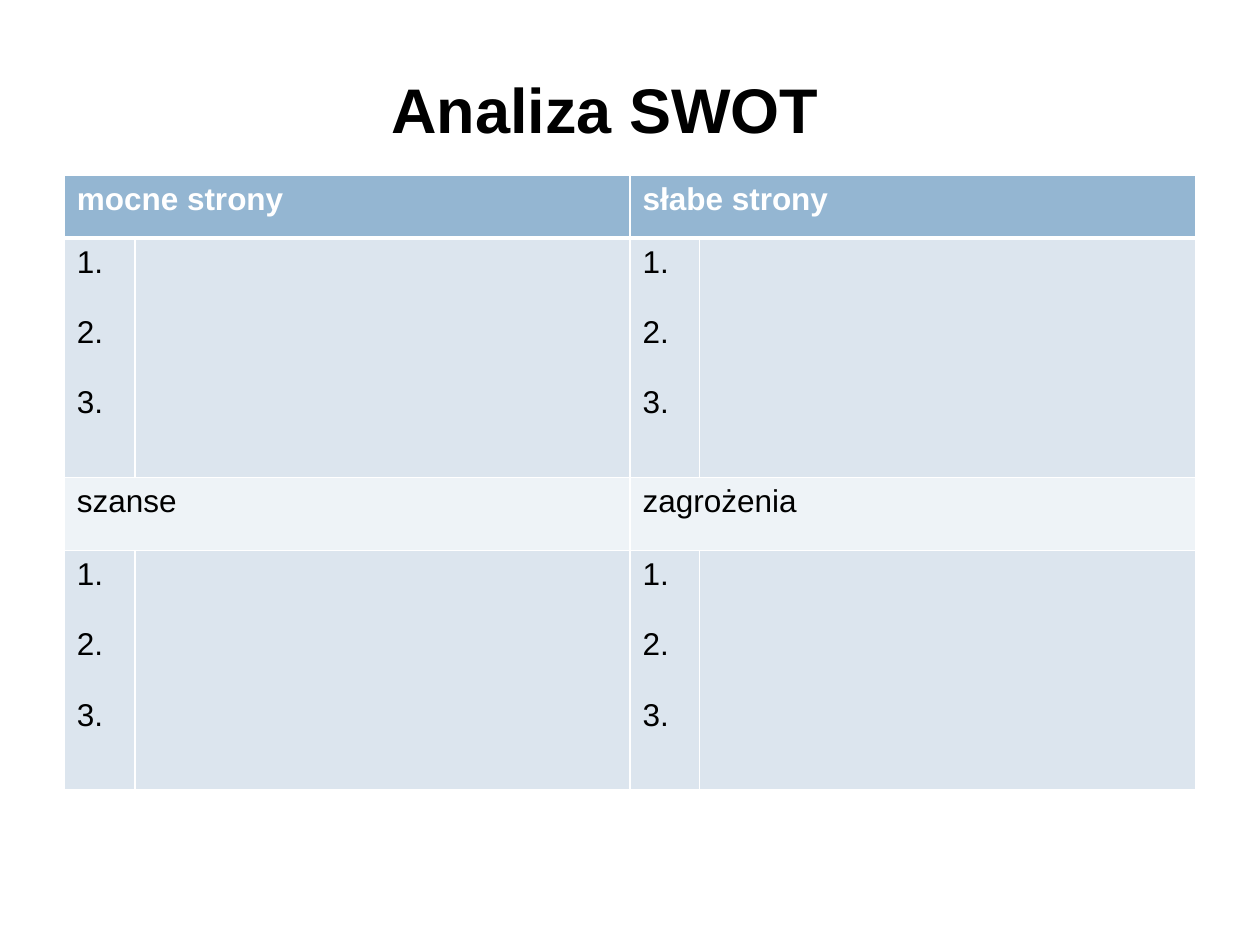
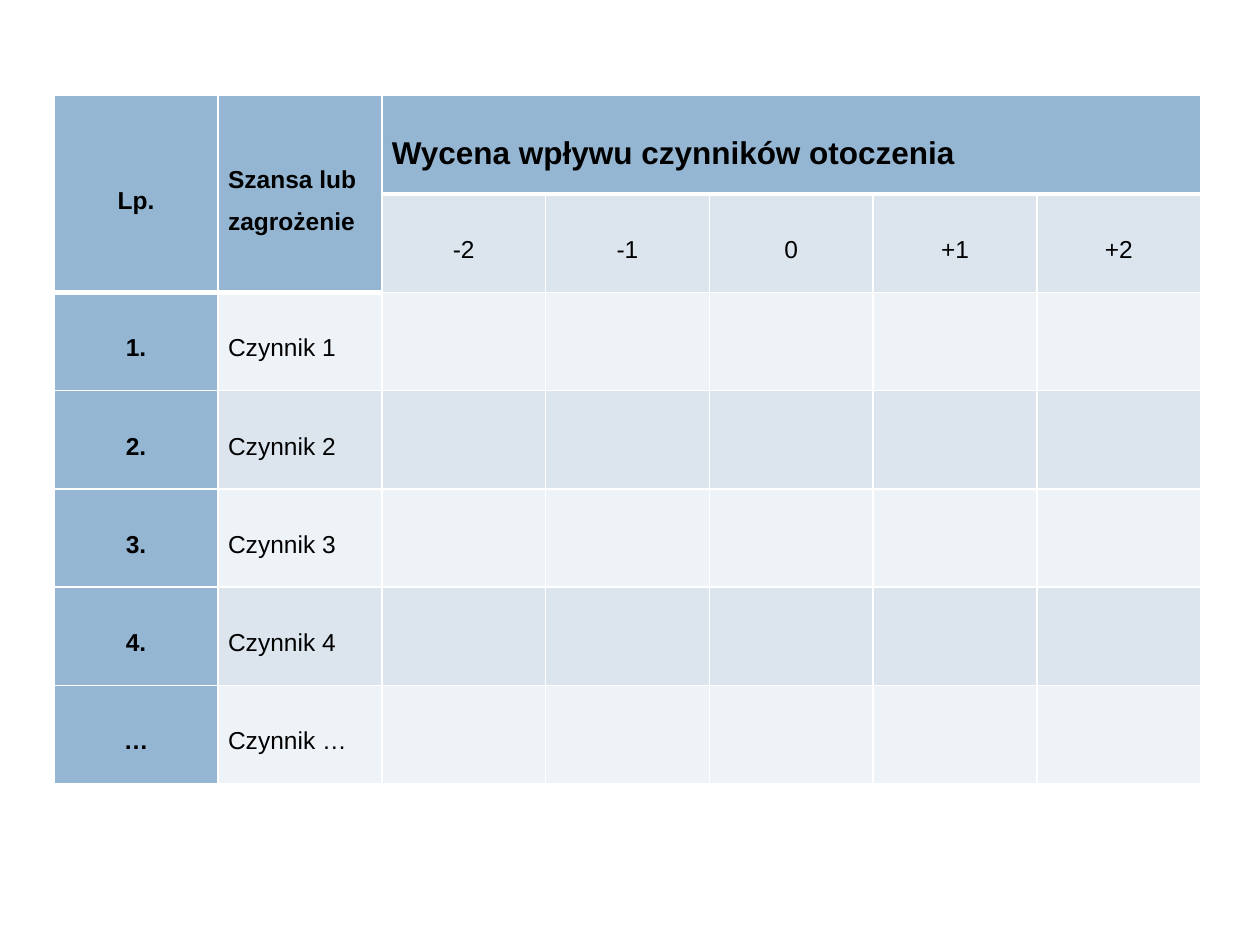
from lxml import etree
from pptx import Presentation
from pptx.dml.color import RGBColor
from pptx.enum.text import MSO_ANCHOR, PP_ALIGN
from pptx.oxml.ns import qn
from pptx.util import Inches, Pt

LEFT, CENTER = PP_ALIGN.LEFT, PP_ALIGN.CENTER
TOP, MIDDLE = MSO_ANCHOR.TOP, MSO_ANCHOR.MIDDLE

# Shared look
FONT = "Arial"
BLACK, WHITE = "000000", "FFFFFF"
HEADER, DARK_BAND, LIGHT_BAND = "94B6D2", "DCE5EE", "EEF3F7"
THIN, THICK = 1, 3

# SWOT slide
TITLE = "Analiza SWOT"
NUMBERS = "1.\n2.\n3."
SWOT_ROWS = [
    ["mocne strony", "", "słabe strony", ""],
    [NUMBERS, "", NUMBERS, ""],
    ["szanse", "", "zagrożenia", ""],
    [NUMBERS, "", NUMBERS, ""],
]
SWOT_WIDTHS = [0.56, 3.93, 0.55, 3.94]
SWOT_HEIGHTS = [0.5, 1.9, 0.58, 1.9]

# Factor rating slide
RATINGS = ["-2", "-1", "0", "+1", "+2"]
FACTORS = [("1.", "Czynnik 1"), ("2.", "Czynnik 2"), ("3.", "Czynnik 3"),
           ("4.", "Czynnik 4"), ("…", "Czynnik …")]
BLANKS = [""] * len(RATINGS)
RATING_ROWS = [
    ["Lp.", "Szansa lub zagrożenie", "Wycena wpływu czynników otoczenia"] + BLANKS[1:],
    ["", ""] + RATINGS,
] + [[number, factor] + BLANKS for number, factor in FACTORS]
RATING_SIDE, RATING_HEIGHT = 1.3, 0.78


def color(value):
    return RGBColor.from_string(value)


def format_text(text_frame, size, text_color, bold, align):
    for paragraph in text_frame.paragraphs:
        paragraph.alignment = align
        for run in paragraph.runs:
            run.font.name = FONT
            run.font.size = Pt(size)
            run.font.bold = bold
            run.font.color.rgb = color(text_color)


def set_borders(cell, top_width, bottom_width):
    """Draw white lines on all four sides; they precede the cell fill."""
    properties = cell._tc.get_or_add_tcPr()
    sides = [("a:lnL", THIN), ("a:lnR", THIN), ("a:lnT", top_width), ("a:lnB", bottom_width)]
    for position, (tag, width) in enumerate(sides):
        line = etree.Element(qn(tag), w=str(Pt(width)))
        fill = etree.SubElement(line, qn("a:solidFill"))
        etree.SubElement(fill, qn("a:srgbClr"), val=WHITE)
        properties.insert(position, line)


def add_grid(slide, left, top, widths, heights, rows, merges, heavy, fill_of, style_cell):
    """Add a table; heavy holds the cells with a thick line below them."""
    frame = slide.shapes.add_table(
        len(rows), len(widths), Inches(left), Inches(top),
        Inches(sum(widths)), Inches(sum(heights)))
    table = frame.table
    for column, width in zip(table.columns, widths):
        column.width = Inches(width)
    for row, height in zip(table.rows, heights):
        row.height = Inches(height)
    for r, texts in enumerate(rows):
        for c, text in enumerate(texts):
            cell = table.cell(r, c)
            cell.fill.solid()
            cell.fill.fore_color.rgb = color(fill_of(r, c))
            set_borders(cell, THICK if (r - 1, c) in heavy else THIN,
                        THICK if (r, c) in heavy else THIN)
            if text:
                cell.text_frame.text = text
                style_cell(cell, r, c)
    for first, last in merges:
        table.cell(*first).merge(table.cell(*last))


def band(row):
    return DARK_BAND if row % 2 else LIGHT_BAND


def swot_fill(row, column):
    return band(row) if row else HEADER


def style_swot_cell(cell, row, column):
    header = row == 0
    cell.vertical_anchor = TOP
    format_text(cell.text_frame, 18, WHITE if header else BLACK, header, LEFT)
    for paragraph in cell.text_frame.paragraphs[1:]:
        paragraph.space_before = Pt(20)


def is_rating_header(row, column):
    return row == 0 or column == 0 or (row == 1 and column == 1)


def rating_fill(row, column):
    return HEADER if is_rating_header(row, column) else band(row)


def style_rating_cell(cell, row, column):
    cell.vertical_anchor = MIDDLE
    cell.margin_left = cell.margin_right = Inches(0.08)
    cell.margin_top = cell.margin_bottom = Inches(0.02)
    wide_header = row == 0 and column == 2
    align = LEFT if column == 1 or wide_header else CENTER
    format_text(cell.text_frame, 18 if wide_header else 14, BLACK,
                is_rating_header(row, column), align)
    for paragraph in cell.text_frame.paragraphs:
        paragraph.line_spacing = 1.5
        paragraph.space_after = Pt(10)


def add_swot_slide(presentation):
    slide = presentation.slides.add_slide(presentation.slide_layouts[6])
    title = slide.shapes.add_textbox(Inches(1.69), Inches(0.51), Inches(6.22), Inches(0.71))
    title.text_frame.word_wrap = True
    title.text_frame.text = TITLE
    format_text(title.text_frame, 36, BLACK, True, CENTER)

    # Each label row spans the number and note columns of both halves
    merges = [((r, c), (r, c + 1)) for r in (0, 2) for c in (0, 2)]
    heavy = {(0, c) for c in range(len(SWOT_WIDTHS))}
    add_grid(slide, 0.51, 1.39, SWOT_WIDTHS, SWOT_HEIGHTS, SWOT_ROWS,
             merges, heavy, swot_fill, style_swot_cell)


def add_rating_slide(presentation):
    slide = presentation.slides.add_slide(presentation.slide_layouts[6])
    column_count = len(RATING_ROWS[0])
    merges = [((0, 0), (1, 0)), ((0, 1), (1, 1)), ((0, 2), (0, column_count - 1))]
    heavy = {(0, c) for c in range(column_count)} | {(1, 0), (1, 1)}
    add_grid(slide, 0.43, 0.76, [RATING_SIDE] * column_count,
             [RATING_HEIGHT] * len(RATING_ROWS), RATING_ROWS,
             merges, heavy, rating_fill, style_rating_cell)


def main():
    presentation = Presentation()
    presentation.slide_width = Inches(10)
    presentation.slide_height = Inches(7.5)
    add_swot_slide(presentation)
    add_rating_slide(presentation)
    presentation.save("out.pptx")


if __name__ == "__main__":
    main()
